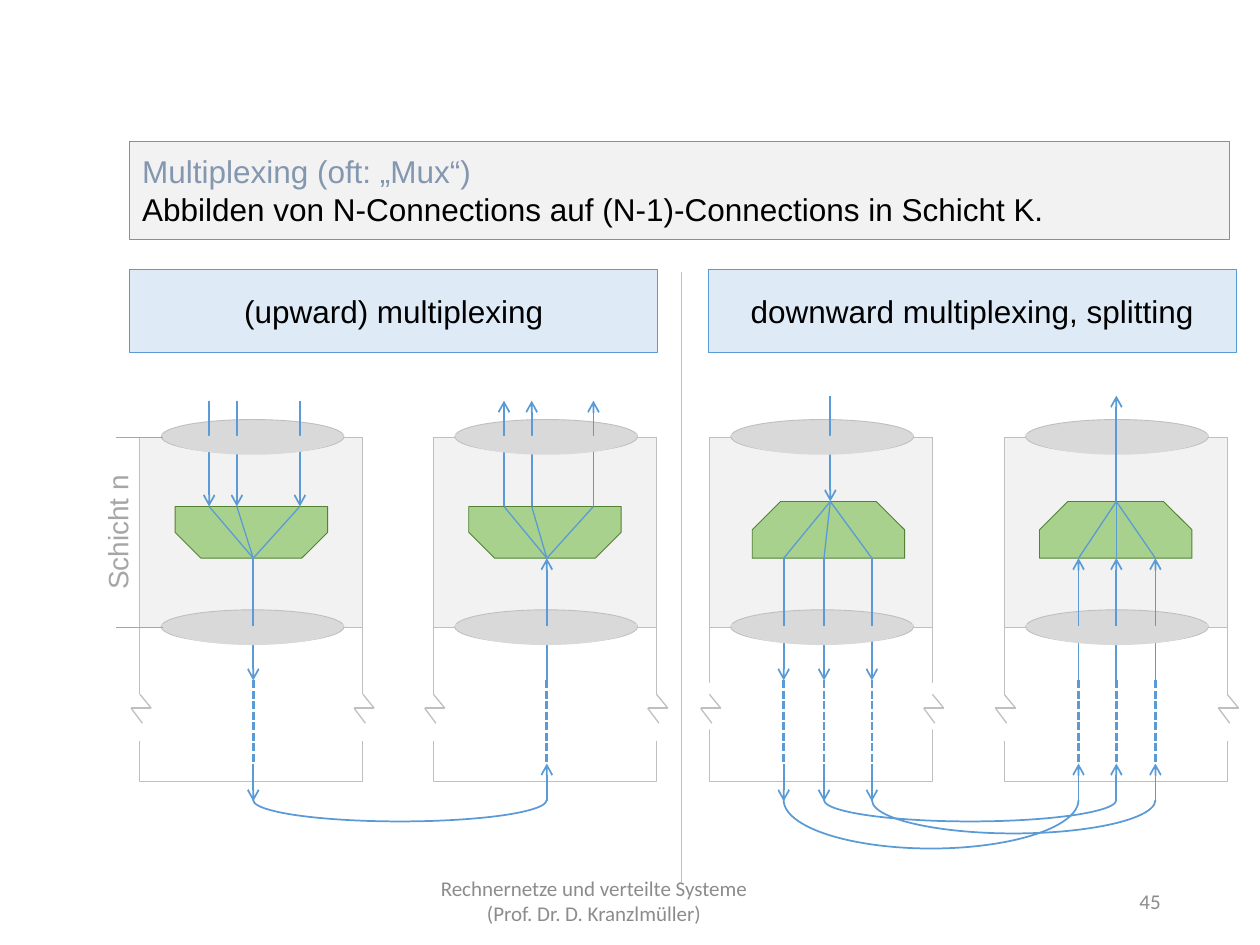
from itertools import pairwise

from lxml import etree
from pptx import Presentation
from pptx.dml.color import RGBColor
from pptx.enum.dml import MSO_LINE
from pptx.enum.shapes import MSO_CONNECTOR, MSO_SHAPE as SHAPE
from pptx.enum.text import MSO_ANCHOR, PP_ALIGN as ALIGN
from pptx.oxml.ns import qn
from pptx.util import Inches, Pt

WHITE = RGBColor(0xFF, 0xFF, 0xFF)
BLACK = RGBColor(0, 0, 0)
BLUE = RGBColor(0x5B, 0x9B, 0xD5)
PALE_BLUE = RGBColor(0xDE, 0xEB, 0xF7)
SLATE = RGBColor(0x84, 0x97, 0xB0)
GREEN = RGBColor(0xA9, 0xD1, 0x8E)
DARK_GREEN = RGBColor(0x54, 0x82, 0x35)
PANEL = RGBColor(0xF2, 0xF2, 0xF2)
DISC = RGBColor(0xD9, 0xD9, 0xD9)
EDGE = RGBColor(0xBF, 0xBF, 0xBF)
LABEL = RGBColor(0xA6, 0xA6, 0xA6)
FOOTER = RGBColor(0x8C, 0x8C, 0x8C)

STACK_W = 1.77
LAYER_TOP, LAYER_BOTTOM, STACK_BOTTOM = 3.47, 4.98, 6.2
DASH_TOP, DASH_BOTTOM = 5.4, 6.06


def add_shape(slide, kind, box, fill=None, line=None, width=0.5, flip=False, adj=()):
    s = slide.shapes.add_shape(kind, *map(Inches, box))
    s.shadow.inherit = False
    if fill is None:
        s.fill.background()
    else:
        s.fill.solid()
        s.fill.fore_color.rgb = fill
    if line is None:
        s.line.fill.background()
    else:
        s.line.color.rgb = line
        s.line.width = Pt(width)
    for i, value in enumerate(adj):
        s.adjustments[i] = value
    if flip:
        s._element.spPr.find(qn("a:xfrm")).set("flipV", "1")
    return s


def add_line(slide, start, end, color=BLUE, width=1.0, arrow=False, dash=False):
    c = slide.shapes.add_connector(MSO_CONNECTOR.STRAIGHT, *map(Inches, (*start, *end)))
    c.line.color.rgb = color
    c.line.width = Pt(width)
    if dash:
        c.line.dash_style = MSO_LINE.SQUARE_DOT
    if arrow:
        etree.SubElement(c.line._get_or_add_ln(), qn("a:tailEnd"), type="arrow")
    etree.SubElement(c._element.spPr, qn("a:effectLst"))
    return c


def add_wire(slide, x, top, bottom, down):
    """Vertical arrow that points down or up."""
    ends = [(x, top), (x, bottom)]
    add_line(slide, *(ends if down else ends[::-1]), arrow=True)


def write(shape, lines, size, font="Arial", align=ALIGN.CENTER):
    """Fill a shape with (text, colour) paragraphs."""
    tf = shape.text_frame
    tf.word_wrap = True
    tf.vertical_anchor = MSO_ANCHOR.MIDDLE
    tf.text = "\n".join(text for text, _ in lines)
    for p, (_, color) in zip(tf.paragraphs, lines):
        p.alignment = align
        p.font.size = Pt(size)
        p.font.name = font
        p.font.color.rgb = color


def add_text(slide, box, lines, size, **style):
    s = slide.shapes.add_textbox(*map(Inches, box))
    write(s, lines, size, **style)
    return s


def add_disc_front(slide, x, y):
    """Front half of a service access point, hiding the wires behind it."""
    add_shape(slide, SHAPE.BLOCK_ARC, (x + 0.17, y - 0.19, 1.45, 0.33), DISC, flip=True)
    add_shape(slide, SHAPE.RECTANGLE, (x + 0.41, y - 0.01, 0.9, 0.08), DISC)


def add_break(slide, x):
    """Zigzag where the side of a stack is interrupted."""
    points = [(x, 5.51), (x + 0.09, 5.62), (x - 0.07, 5.62), (x + 0.02, 5.74)]
    for start, end in pairwise(points):
        add_line(slide, start, end, EDGE, 0.75)


def add_stack(slide, x, uppers, lowers, down, mux_dx=0.28, gap_top=5.51,
              wire_in_front=False):
    """Protocol stack at x, with upper and lower ports joined by a multiplexer."""
    upward = len(uppers) > len(lowers)
    mux_top = 4.02 if upward else 3.98
    mux_bottom = 4.43
    add_shape(slide, SHAPE.RECTANGLE,
              (x, LAYER_BOTTOM, STACK_W, STACK_BOTTOM - LAYER_BOTTOM), WHITE, EDGE)
    add_shape(slide, SHAPE.RECTANGLE,
              (x, LAYER_TOP, STACK_W, LAYER_BOTTOM - LAYER_TOP), PANEL, EDGE)
    for y in (LAYER_TOP, LAYER_BOTTOM):
        add_shape(slide, SHAPE.OVAL, (x + 0.17, y - 0.14, 1.45, 0.27), DISC, EDGE)
    add_shape(slide, SHAPE.SNIP_2_SAME_RECTANGLE,
              (x + mux_dx, mux_top, 1.21, mux_bottom - mux_top),
              GREEN, DARK_GREEN, flip=upward, adj=(0.5, 0))

    def add_upper_wires():
        for port in uppers:
            add_wire(slide, port, mux_top - 0.84, mux_top, down)

    if not wire_in_front:
        add_upper_wires()
    for port in lowers:
        add_wire(slide, port, mux_bottom, DASH_TOP, down)
    for upper in uppers:
        for lower in lowers:
            add_line(slide, (upper, mux_top), (lower, mux_bottom), width=0.75)
    for y in (LAYER_TOP, LAYER_BOTTOM):
        add_disc_front(slide, x, y)
    if wire_in_front:
        add_upper_wires()

    add_shape(slide, SHAPE.RECTANGLE, (x - 0.12, gap_top, 1.95, 0.37), WHITE)
    for side in (x, x + STACK_W):
        add_break(slide, side)
    for port in lowers:
        add_line(slide, (port, DASH_TOP), (port, DASH_BOTTOM), width=1.5, dash=True)
        add_wire(slide, port, DASH_BOTTOM, 6.36, down)


def add_link(slide, left, right, height):
    """Curve below two stacks, from port to port."""
    add_shape(slide, SHAPE.ARC, (left, 6.35 - height / 2, right - left, height),
              line=BLUE, width=1, flip=True, adj=(107.74, 0))


def add_layer_label(slide, x):
    for y in (LAYER_TOP, LAYER_BOTTOM):
        add_line(slide, (x + 0.37, y), (x, y), LABEL, 0.5)
    s = add_text(slide, (x - 0.75, 4.04, 1.52, 0.37), [("Schicht n", LABEL)], 16)
    s.rotation = 270


def add_heading(slide, x, text):
    s = add_shape(slide, SHAPE.RECTANGLE, (x, 2.14, 4.19, 0.66), PALE_BLUE, BLUE)
    write(s, [(text, BLACK)], 18)


def add_definition(slide, box):
    s = add_shape(slide, SHAPE.RECTANGLE, box, PANEL, BLUE)
    write(s, [("Multiplexing (oft: „Mux“)", SLATE),
              ("Abbilden von N-Connections auf (N-1)-Connections in Schicht K.", BLACK)],
          18, align=ALIGN.LEFT)


def add_footer(slide, y):
    s = add_text(slide, (3.31, y, 3.38, 0.4),
                 [("Rechnernetze und verteilte Systeme", FOOTER),
                  ("(Prof. Dr. D. Kranzlmüller)", FOOTER)], 12, font="Calibri")
    first = s.text_frame.paragraphs[0]
    first._p.get_or_add_pPr().set("marR", str(Inches(0.57)))
    add_text(slide, (7.06, y, 2.25, 0.4), [("45", FOOTER)], 12,
             font="Calibri", align=ALIGN.RIGHT)


def main():
    prs = Presentation()
    prs.slide_width, prs.slide_height = Inches(10), Inches(7.5)
    slide = prs.slides.add_slide(prs.slide_layouts[6])

    add_footer(slide, 6.95)
    add_definition(slide, (1.03, 1.12, 8.73, 0.78))
    add_heading(slide, 1.03, "(upward) multiplexing")
    add_heading(slide, 5.62, "downward multiplexing, splitting")
    add_line(slide, (5.41, 2.16), (5.41, 7.01), EDGE, 0.75)

    add_stack(slide, 1.11, (1.66, 1.88, 2.38), (2.01,), down=True)
    add_stack(slide, 3.44, (4.0, 4.22, 4.71), (4.34,), down=False)
    add_layer_label(slide, 0.92)
    add_link(slide, 2.01, 4.34, 0.34)

    senders, receivers = (6.22, 6.54, 6.92), (8.56, 8.86, 9.17)
    add_stack(slide, 5.63, (6.59,), senders, down=True, mux_dx=0.34, gap_top=5.42)
    add_stack(slide, 7.97, (8.86,), receivers, down=False, wire_in_front=True)
    for left, right, height in zip(senders, receivers, (0.77, 0.34, 0.53)):
        add_link(slide, left, right, height)

    prs.save("out.pptx")


if __name__ == "__main__":
    main()
